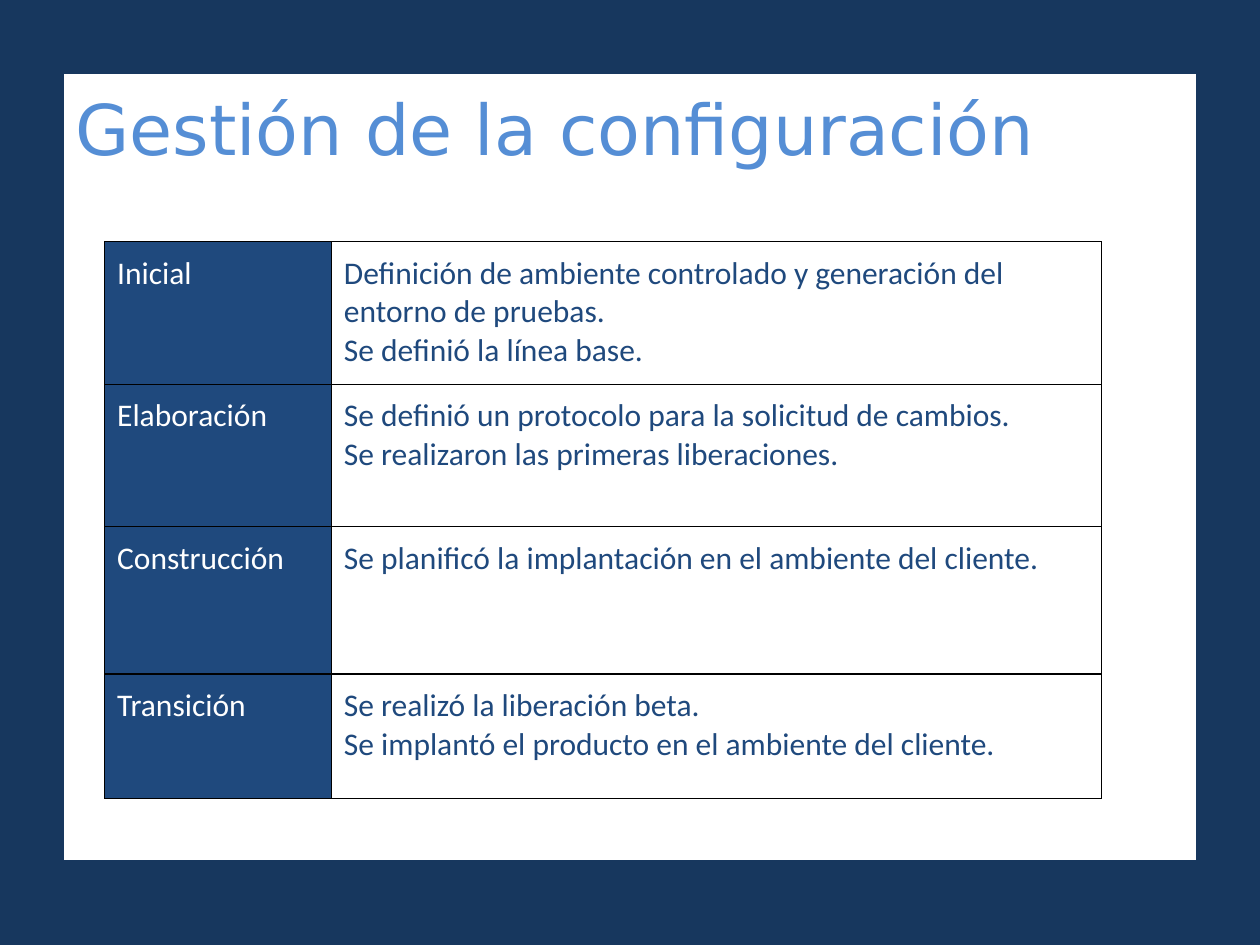
from lxml.etree import SubElement
from pptx import Presentation
from pptx.dml.color import RGBColor
from pptx.enum.text import MSO_ANCHOR, MSO_AUTO_SIZE, PP_ALIGN
from pptx.oxml.ns import qn
from pptx.util import Inches, Pt

COLORS = {
    "background": "17375E",
    "panel": "FFFFFF",
    "title": "558ED5",
    "phase": "1F497D",
    "phase_text": "FFFFFF",
    "border": "000000",
}
INSET = Inches(0.1)
COLUMN_WIDTHS = [1.8, 6.11]
ROW_HEIGHTS = [1.13, 1.13, 1.17, 0.99]
PHASES = [
    ("Inicial", [
        "Definición de ambiente controlado y generación del entorno de pruebas.",
        "Se definió la línea base.",
    ]),
    ("Elaboración", [
        "Se definió un protocolo para la solicitud de cambios.",
        "Se realizaron las primeras liberaciones.",
    ]),
    ("Construcción", [
        "Se planificó la implantación en el ambiente del cliente.",
    ]),
    ("Transición", [
        "Se realizó la liberación beta.",
        "Se implantó el producto en el ambiente del cliente.",
    ]),
]


def color(name):
    return RGBColor.from_string(COLORS[name])


def set_font(paragraph, name, size, color_name):
    paragraph.font.name = name
    paragraph.font.size = Pt(size)
    paragraph.font.color.rgb = color(color_name)


def set_insets(target):
    target.margin_left = target.margin_right = INSET
    target.margin_top = target.margin_bottom = INSET


def add_borders(cell):
    properties = cell._tc.get_or_add_tcPr()
    for index, side in enumerate(("a:lnL", "a:lnR", "a:lnT", "a:lnB")):
        line = properties.makeelement(qn(side), {"w": str(Pt(0.75))})
        fill = SubElement(line, qn("a:solidFill"))
        SubElement(fill, qn("a:srgbClr"), val=COLORS["border"])
        properties.insert(index, line)


def place_title_panel(slide, left, top, width, height):
    title = slide.shapes.title
    title.left, title.top, title.width, title.height = left, top, width, height
    title.fill.solid()
    title.fill.fore_color.rgb = color("panel")
    title.line.color.rgb = color("background")
    title.line.width = Pt(0.75)
    frame = title.text_frame
    frame.text = "Gestión de la configuración"
    frame.word_wrap = True
    frame.auto_size = MSO_AUTO_SIZE.NONE
    frame.vertical_anchor = MSO_ANCHOR.TOP
    set_insets(frame)
    paragraph = frame.paragraphs[0]
    paragraph.alignment = PP_ALIGN.LEFT
    set_font(paragraph, "DejaVu Sans", 40, "title")


def fill_cell(cell, lines, text_color, fill_color=None):
    cell.text = "\n".join(lines)
    cell.vertical_anchor = MSO_ANCHOR.TOP
    set_insets(cell)
    if fill_color:
        cell.fill.solid()
        cell.fill.fore_color.rgb = color(fill_color)
    else:
        cell.fill.background()
    add_borders(cell)
    for paragraph in cell.text_frame.paragraphs:
        set_font(paragraph, "Calibri", 18, text_color)


def add_phase_table(slide, left, top):
    width, height = Inches(sum(COLUMN_WIDTHS)), Inches(sum(ROW_HEIGHTS))
    table = slide.shapes.add_table(
        len(PHASES), len(COLUMN_WIDTHS), left, top, width, height).table
    table.first_row = table.horz_banding = False
    for column, column_width in zip(table.columns, COLUMN_WIDTHS):
        column.width = Inches(column_width)
    for row, row_height, (phase, results) in zip(table.rows, ROW_HEIGHTS, PHASES):
        row.height = Inches(row_height)
        fill_cell(row.cells[0], [phase], "phase_text", "phase")
        fill_cell(row.cells[1], results, "phase")


def main():
    presentation = Presentation()
    presentation.slide_width, presentation.slide_height = Inches(10), Inches(7.5)
    slide = presentation.slides.add_slide(presentation.slide_layouts[5])
    slide.background.fill.solid()
    slide.background.fill.fore_color.rgb = color("background")
    place_title_panel(slide, Inches(0.5), Inches(0.58), Inches(9), Inches(6.25))
    add_phase_table(slide, Inches(0.83), Inches(1.92))
    presentation.save("out.pptx")


if __name__ == "__main__":
    main()
